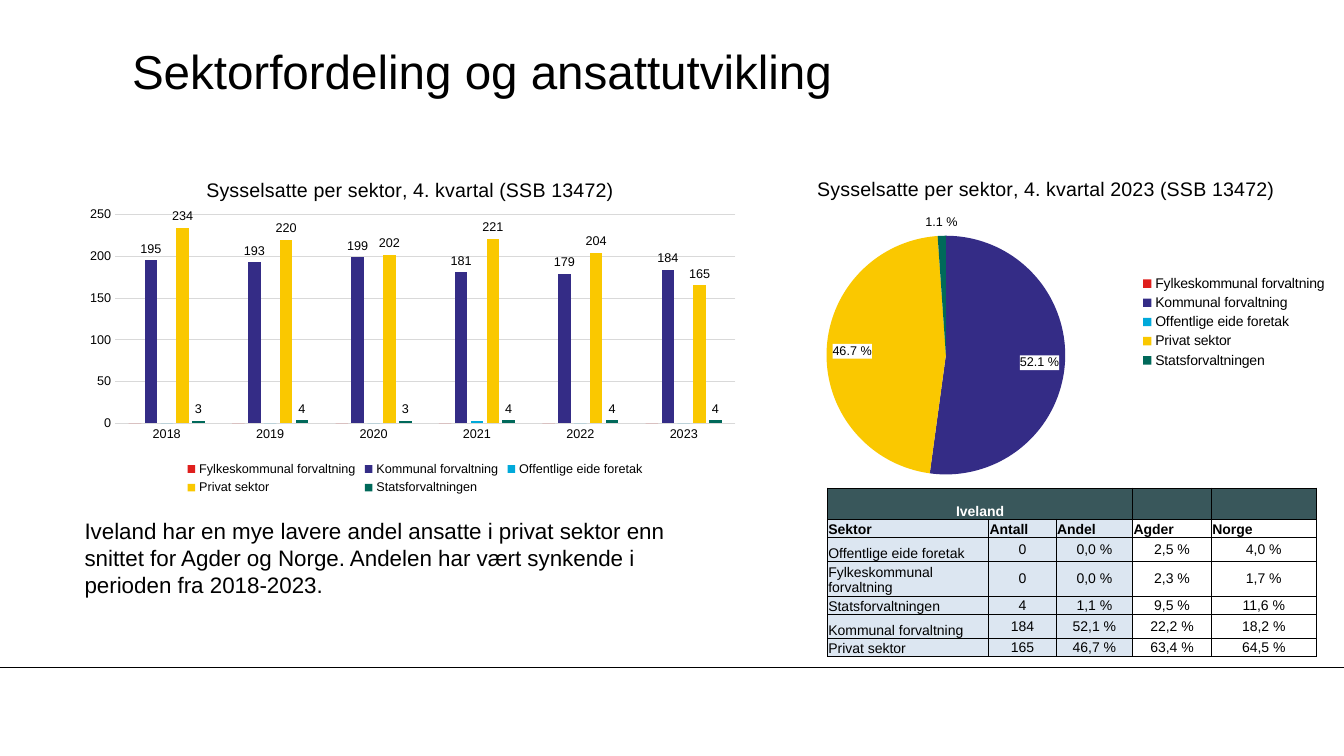
"""Build a slide on employment by sector with two charts and a table."""
from lxml import etree
from pptx import Presentation
from pptx.chart.data import CategoryChartData
from pptx.dml.color import RGBColor
from pptx.enum.chart import XL_CHART_TYPE, XL_LABEL_POSITION, XL_LEGEND_POSITION, XL_TICK_MARK
from pptx.enum.shapes import MSO_CONNECTOR
from pptx.enum.text import MSO_ANCHOR, PP_ALIGN
from pptx.oxml import parse_xml
from pptx.oxml.ns import qn
from pptx.util import Pt

BAR, PIE = XL_CHART_TYPE.COLUMN_CLUSTERED, XL_CHART_TYPE.PIE
OUT, IN = XL_LABEL_POSITION.OUTSIDE_END, XL_LABEL_POSITION.INSIDE_END
BELOW, RIGHT = XL_LEGEND_POSITION.BOTTOM, XL_LEGEND_POSITION.RIGHT
NONE = XL_TICK_MARK.NONE
LEFT, CENTER = PP_ALIGN.LEFT, PP_ALIGN.CENTER
MIDDLE, BOTTOM = MSO_ANCHOR.MIDDLE, MSO_ANCHOR.BOTTOM
A = "http://schemas.openxmlformats.org/drawingml/2006/main"
C = "http://schemas.openxmlformats.org/drawingml/2006/chart"
FACE, BLACK, GREY = "Arial", "000000", "D9D9D9"


def color(code):
    return RGBColor.from_string(code)


def write(frame, text, size=10, ink=BLACK, bold=False, align=LEFT):
    para = frame.paragraphs[0]
    para.alignment = align
    run = para.add_run()
    run.text = text
    run.font.name, run.font.size, run.font.bold = FACE, Pt(size), bold
    run.font.color.rgb = color(ink)


deck = Presentation()
deck.slide_width, deck.slide_height = Pt(960), Pt(540)
slide = deck.slides.add_slide(deck.slide_layouts[6])
shapes = slide.shapes

rule = shapes.add_connector(MSO_CONNECTOR.STRAIGHT, Pt(0), Pt(476.6), Pt(960), Pt(476.6))
rule.line.color.rgb, rule.line.width = color(BLACK), Pt(0.75)
etree.SubElement(rule._element.spPr, qn("a:effectLst"))

title = shapes.add_textbox(Pt(94.3), Pt(23), Pt(799), Pt(54)).text_frame
title.margin_left = title.margin_right = title.margin_top = title.margin_bottom = 0
title.word_wrap, title.vertical_anchor = True, MIDDLE
write(title, "Sektorfordeling og ansattutvikling", size=34)

body = shapes.add_textbox(Pt(53.3), Pt(365.8), Pt(461.5), Pt(65.5)).text_frame
body.word_wrap = True
write(body, "Iveland har en mye lavere andel ansatte i privat sektor enn snittet for "
      "Agder og Norge. Andelen har vært synkende i perioden fra 2018-2023.", size=16)

rows = [
    ("Iveland", "", "", "", ""),
    ("Sektor", "Antall", "Andel", "Agder", "Norge"),
    ("Offentlige eide foretak", "0", "0,0 %", "2,5 %", "4,0 %"),
    ("Fylkeskommunal forvaltning", "0", "0,0 %", "2,3 %", "1,7 %"),
    ("Statsforvaltningen", "4", "1,1 %", "9,5 %", "11,6 %"),
    ("Kommunal forvaltning", "184", "52,1 %", "22,2 %", "18,2 %"),
    ("Privat sektor", "165", "46,7 %", "63,4 %", "64,5 %"),
]
widths = [115.2, 48.2, 54.7, 56.2, 74.9]
heights = [13, 13, 17.2, 24.2, 13, 17.2, 13]
table = shapes.add_table(len(rows), len(widths), Pt(591), Pt(348.5),
                         Pt(sum(widths)), Pt(sum(heights))).table
table.first_row = table.horz_banding = False
for column, width in zip(table.columns, widths):
    column.width = Pt(width)
for r, row in enumerate(rows):
    table.rows[r].height = Pt(heights[r])
    for c, text in enumerate(row):
        cell = table.cell(r, c)
        cell.margin_left = cell.margin_right = cell.margin_top = Pt(0.7)
        cell.margin_bottom = 0
        cell.vertical_anchor = MIDDLE if r > 1 and c else BOTTOM
        for side in "LRTB":
            cell._tc.get_or_add_tcPr().append(parse_xml(
                f'<a:ln{side} xmlns:a="{A}" w="6350"><a:solidFill>'
                f'<a:srgbClr val="{BLACK}"/></a:solidFill></a:ln{side}>'))
        if r and c > 2:
            cell.fill.background()
        else:
            cell.fill.solid()
            cell.fill.fore_color.rgb = color("DCE6F1" if r else "39575B")
        write(cell.text_frame, text, ink=BLACK if r else "FFFFFF", bold=r < 2,
              align=CENTER if r == 0 or r > 1 and c else LEFT)
table.cell(0, 0).merge(table.cell(0, 2))

sectors = [
    ("Fylkeskommunal forvaltning", "DF1F1D", (0, 0, 0, 0, 0, 0), 0),
    ("Kommunal forvaltning", "342C86", (195, 193, 199, 181, 179, 184), 52.1),
    ("Offentlige eide foretak", "00A9DA", (0, 0, 0, 3, 0, 0), 0),
    ("Privat sektor", "FAC800", (234, 220, 202, 221, 204, 165), 46.7),
    ("Statsforvaltningen", "00695A", (3, 4, 3, 4, 4, 4), 1.1),
]
years = CategoryChartData(number_format="#,##0")
years.categories = [str(year) for year in range(2018, 2024)]
shares = CategoryChartData(number_format='0.0" %"')
shares.categories = [name for name, *rest in sectors]
for name, ink, counts, share in sectors:
    years.add_series(name, counts)
shares.add_series("Series 1", [share for *rest, share in sectors])

bars = shapes.add_chart(BAR, Pt(53.3), Pt(111.6), Pt(481.7), Pt(244.8), years).chart
pie = shapes.add_chart(PIE, Pt(535), Pt(111.6), Pt(419.8), Pt(236.9), shares).chart
specs = [
    (bars, "Sysselsatte per sektor, 4. kvartal (SSB 13472)", BELOW, 9,
     [(0.19, 0.05), (0.16, 0.88, 0.69, 0.12), (0.06, 0.17, 0.92, 0.61)]),
    (pie, "Sysselsatte per sektor, 4. kvartal 2023 (SSB 13472)", RIGHT, 10,
     [(0.11, 0.05), (0.66, 0.35, 0.33, 0.3), (0.13, 0.24, 0.41, 0.72)]),
]
for chart, head, place, size, spots in specs:
    chart.font.name, chart.font.size = FACE, Pt(10)
    chart.font.color.rgb = color(BLACK)
    chart.has_title = chart.has_legend = True
    write(chart.chart_title.text_frame, head, size=14, align=CENTER)
    legend = chart.legend
    legend.position, legend.include_in_layout = place, False
    legend.font.name, legend.font.size = FACE, Pt(size)
    legend.font.color.rgb = color(BLACK)
    root = chart._chartSpace.chart
    for tag, spot in zip(("title", "legend", "plotArea"), spots):
        node = root.find(qn("c:" + tag))
        for old in node.findall(qn("c:layout")):
            node.remove(old)
        inner = '<c:layoutTarget val="inner"/>' if tag == "plotArea" else ""
        edges = '<c:xMode val="edge"/><c:yMode val="edge"/>'
        sizes = "".join(f'<c:{key} val="{part}"/>' for key, part in zip("xywh", spot))
        node.insert(0 if inner else 1, parse_xml(
            f'<c:layout xmlns:c="{C}"><c:manualLayout>{inner}{edges}{sizes}'
            '</c:manualLayout></c:layout>'))

plot = bars.plots[0]
plot.gap_width, plot.overlap, plot.vary_by_categories = 219, -27, False
floor, scale = bars.category_axis, bars.value_axis
for axis in (floor, scale):
    axis.major_tick_mark = axis.minor_tick_mark = NONE
    axis.tick_labels.font.name, axis.tick_labels.font.size = FACE, Pt(9)
    axis.tick_labels.font.color.rgb = color(BLACK)
scale.minimum_scale, scale.maximum_scale, scale.major_unit = 0, 250, 50
scale.format.line.fill.background()
for line in (floor.format.line, scale.major_gridlines.format.line):
    line.color.rgb, line.width = color(GREY), Pt(0.75)

pie.plots[0].vary_by_categories = True
slices = pie.plots[0].series[0].points
for i, (name, ink, counts, share) in enumerate(sectors):
    series = plot.series[i]
    series.invert_if_negative = False
    for part in (series, slices[i]):
        part.format.fill.solid()
        part.format.fill.fore_color.rgb = color(ink)
    if not share:
        continue
    series.data_labels.show_value = True
    label = slices[i].data_label
    for mark, place in ((series.data_labels, OUT), (label, IN if share > 2 else OUT)):
        mark.font.name, mark.font.size = FACE, Pt(9)
        mark.font.color.rgb = color(BLACK)
        mark.position = place
    label._dLbl.find(qn("c:txPr")).addprevious(parse_xml(
        f'<c:spPr xmlns:c="{C}" xmlns:a="{A}"><a:solidFill>'
        '<a:srgbClr val="FFFFFF"/></a:solidFill></c:spPr>'))

deck.save("out.pptx")
